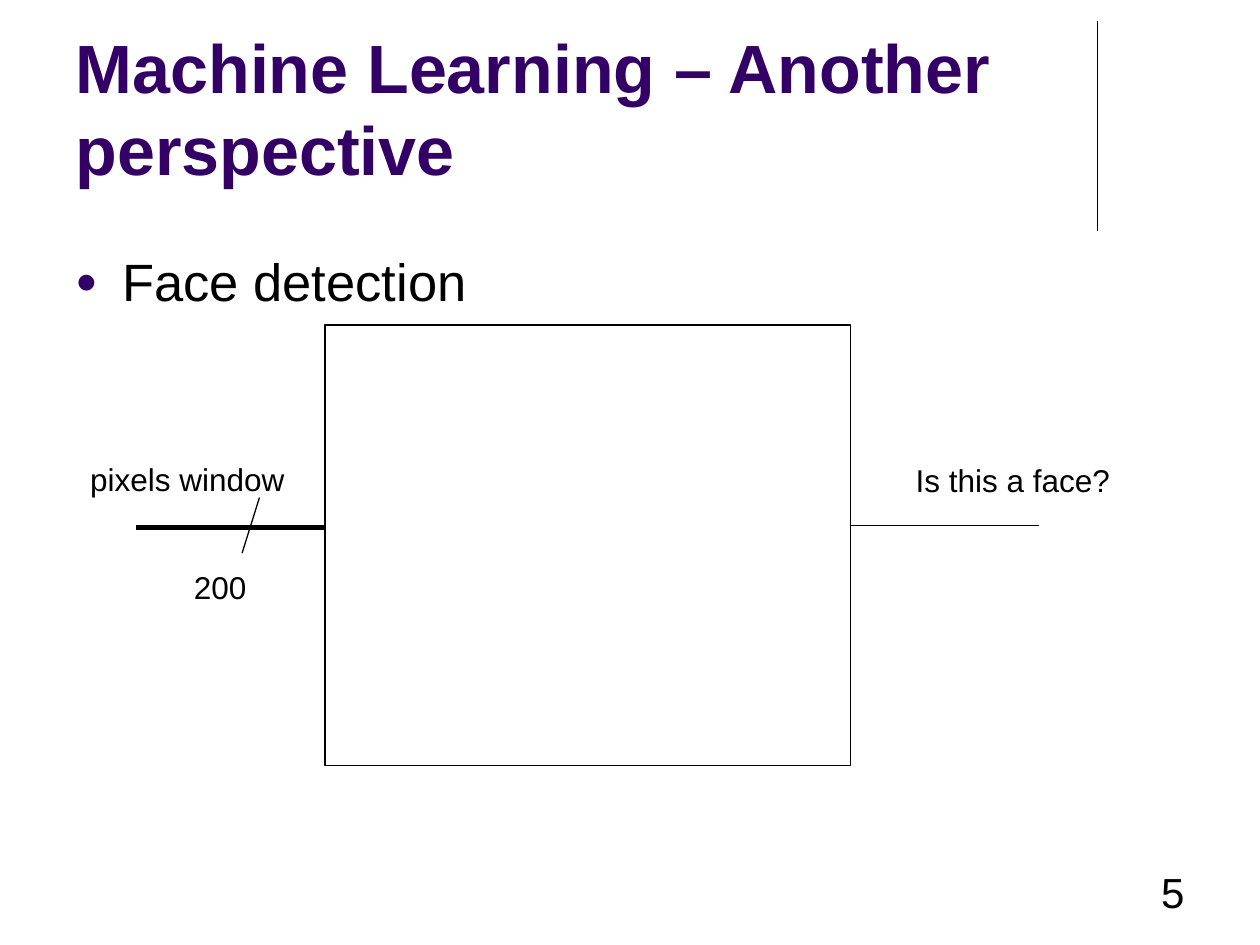
from lxml import etree
from pptx import Presentation
from pptx.dml.color import RGBColor
from pptx.enum.shapes import MSO_CONNECTOR, MSO_SHAPE
from pptx.enum.text import MSO_ANCHOR, MSO_AUTO_SIZE, PP_ALIGN
from pptx.oxml.ns import qn
from pptx.util import Cm, Pt

STRAIGHT = MSO_CONNECTOR.STRAIGHT
RECTANGLE = MSO_SHAPE.RECTANGLE
BOTTOM = MSO_ANCHOR.BOTTOM
NO_AUTOFIT, GROW = MSO_AUTO_SIZE.NONE, MSO_AUTO_SIZE.SHAPE_TO_FIT_TEXT
LEFT, RIGHT = PP_ALIGN.LEFT, PP_ALIGN.RIGHT

COLORS = {"title": "330066", "ink": "000000"}
FONT = "Arial"


def rgb(name):
    return RGBColor.from_string(COLORS[name])


class SlideBuilder:
    def __init__(self, slide):
        self.slide = slide

    def fill_text(self, frame, text, size, color="ink", bold=False, align=LEFT):
        frame.text = text
        paragraph = frame.paragraphs[0]
        paragraph.alignment = align
        font = paragraph.runs[0].font
        font.name, font.size, font.bold = FONT, Pt(size), bold
        font.color.rgb = rgb(color)
        return paragraph

    def title(self, text, left, top, width, height):
        title = self.slide.shapes.title
        title.left, title.top = Cm(left), Cm(top)
        title.width, title.height = Cm(width), Cm(height)
        frame = title.text_frame
        frame.auto_size = NO_AUTOFIT
        frame.vertical_anchor = BOTTOM
        self.fill_text(frame, text, 39, "title", bold=True)

    def text(self, text, left, top, width, height, size, align=LEFT, wrap=True):
        box = self.slide.shapes.add_textbox(Cm(left), Cm(top), Cm(width), Cm(height))
        frame = box.text_frame
        frame.word_wrap = wrap
        frame.auto_size = NO_AUTOFIT if wrap else GROW
        return self.fill_text(frame, text, size, align=align)

    def label(self, text, left, top, width):
        self.text(text, left, top, width, 1.02, 18, wrap=False)

    def bullet(self, text, left, top, width, height):
        paragraph = self.text(text, left, top, width, height, 30)
        properties = paragraph._p.get_or_add_pPr()
        properties.set("marL", str(Cm(0.95)))
        properties.set("indent", str(-Cm(0.95)))
        bullet_color = etree.SubElement(properties, qn("a:buClr"))
        etree.SubElement(bullet_color, qn("a:srgbClr"), val=COLORS["title"])
        etree.SubElement(properties, qn("a:buSzPct"), val="70000")
        etree.SubElement(properties, qn("a:buFont"), typeface=FONT)
        etree.SubElement(properties, qn("a:buChar"), char="●")

    def box(self, left, top, width, height):
        box = self.slide.shapes.add_shape(
            RECTANGLE, Cm(left), Cm(top), Cm(width), Cm(height))
        box.shadow.inherit = False
        box.fill.background()
        box.line.color.rgb = rgb("ink")
        box.line.width = Pt(0.75)

    def line(self, x1, y1, x2, y2, weight=0.75):
        line = self.slide.shapes.add_connector(
            STRAIGHT, Cm(x1), Cm(y1), Cm(x2), Cm(y2))
        line.line.color.rgb = rgb("ink")
        line.line.width = Pt(weight)
        etree.SubElement(line._element.spPr, qn("a:effectLst"))


def main():
    deck = Presentation()
    deck.slide_width, deck.slide_height = Cm(25.4), Cm(19.05)
    builder = SlideBuilder(deck.slides.add_slide(deck.slide_layouts[5]))

    builder.line(22.12, 0.43, 22.12, 4.65)
    builder.title("Machine Learning – Another perspective", 1.27, 0.33, 20.96, 3.61)
    builder.bullet("Face detection", 1.27, 4.9, 22.86, 12.12)
    builder.text("5", 18.21, 17.35, 5.92, 1.27, 24, align=RIGHT)

    # Detector with its input on the left and its output on the right
    detector_left, detector_width, wire = 6.55, 10.59, 3.81
    detector_right = detector_left + detector_width
    builder.box(detector_left, 6.55, detector_width, 8.89)
    builder.line(detector_left - wire, 10.64, detector_left, 10.64, weight=3)
    builder.label("pixels window", 1.57, 9.14, 4.47)
    builder.line(detector_right, 10.59, detector_right + wire, 10.59)
    builder.label("Is this a face?", 18.21, 9.17, 4.47)
    builder.label("200", 3.66, 11.33, 1.57)
    builder.line(5.23, 10.03, 4.88, 11.15)

    deck.save("out.pptx")


if __name__ == "__main__":
    main()
